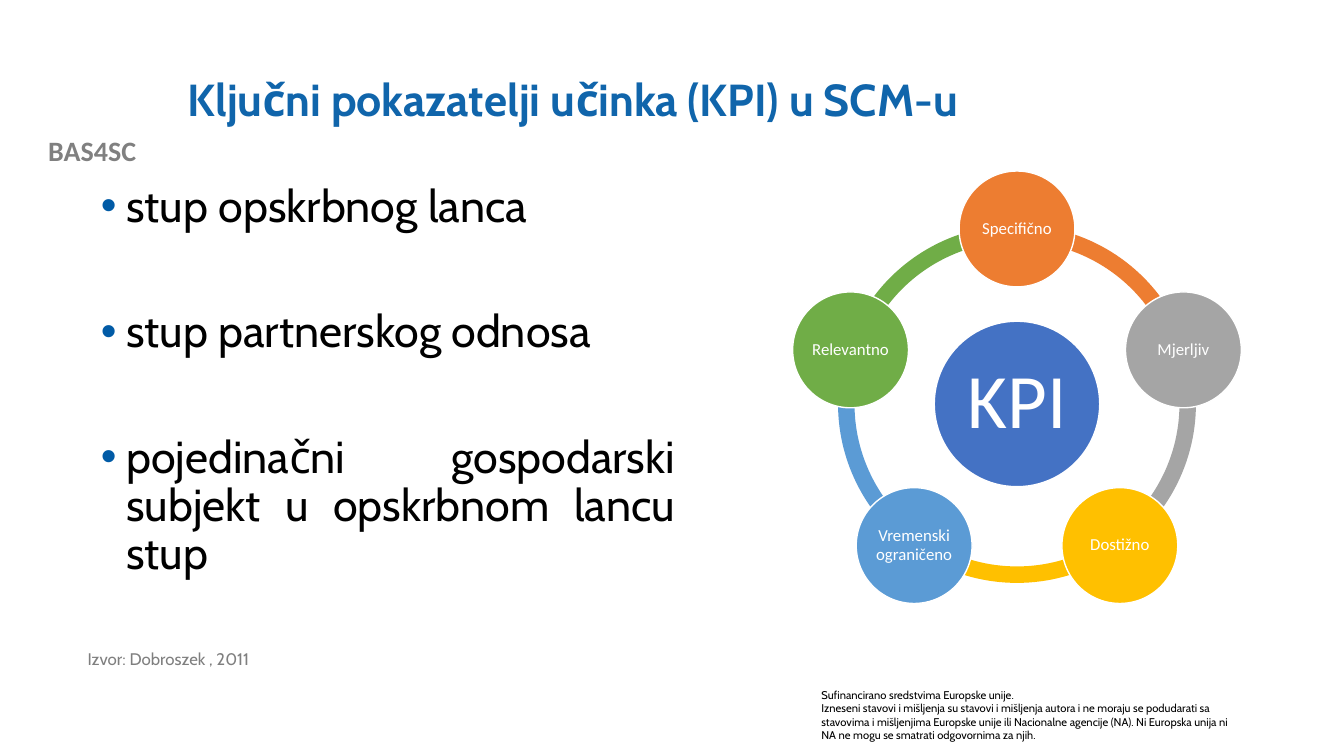
import math
from lxml import etree
from pptx import Presentation
from pptx.dml.color import RGBColor
from pptx.enum.shapes import MSO_SHAPE
from pptx.enum.text import MSO_ANCHOR, MSO_AUTO_SIZE, PP_ALIGN
from pptx.oxml.ns import qn
from pptx.util import Cm, Pt

ARC, OVAL = MSO_SHAPE.BLOCK_ARC, MSO_SHAPE.OVAL
LEFT, CENTER, JUSTIFY = PP_ALIGN.LEFT, PP_ALIGN.CENTER, PP_ALIGN.JUSTIFY
TOP, MIDDLE = MSO_ANCHOR.TOP, MSO_ANCHOR.MIDDLE

COLORS = {
    "title": "1065AB", "bullet": "015BA6", "text": "000000",
    "project": "808080", "source": "7F7F7F", "white": "FFFFFF",
    "hub": "4472C4", "orange": "ED7D31", "grey": "A5A5A5",
    "yellow": "FFC000", "blue": "5B9BD5", "green": "70AD47",
}

TITLE = "Ključni pokazatelji učinka (KPI) u SCM-u"
PILLARS = [
    "stup opskrbnog lanca",
    "stup partnerskog odnosa",
    "pojedinačni gospodarski subjekt u opskrbnom lancu stup",
]
PROJECT = "BAS4SC"
SOURCE = "Izvor: Dobroszek , 2011"
DISCLAIMER = [
    "Sufinancirano sredstvima Europske unije.",
    "Izneseni stavovi i mišljenja su stavovi i mišljenja autora i ne moraju se "
    "podudarati sa stavovima i mišljenjima Europske unije ili Nacionalne agencije "
    "(NA). Ni Europska unija ni NA ne mogu se smatrati odgovornima za njih.",
]
HUB = "KPI"
CRITERIA = [
    ("Specifično", "orange"),
    ("Mjerljiv", "grey"),
    ("Dostižno", "yellow"),
    ("Vremenski ograničeno", "blue"),
    ("Relevantno", "green"),
]

CENTER_X, CENTER_Y = 25.63, 10.18
ORBIT, RING_SIZE, NODE_SIZE, HUB_SIZE = 4.41, 9.02, 2.92, 4.17
RING_THICKNESS = 0.046
ADJ_PER_DEGREE = 0.6


def rgb(name):
    return RGBColor.from_string(COLORS[name])


def write(tf, lines, size, color, font="Cabin", bold=False, align=LEFT,
          spacing=0.9, gap=0, anchor=TOP):
    tf.word_wrap = True
    tf.auto_size = MSO_AUTO_SIZE.NONE
    tf.vertical_anchor = anchor
    for i, line in enumerate(lines):
        p = tf.paragraphs[0] if i == 0 else tf.add_paragraph()
        p.alignment = align
        p.line_spacing = spacing
        p.space_before = Pt(gap if i else 0)
        r = p.add_run()
        r.text = line
        r.font.name = font
        r.font.size = Pt(size)
        r.font.bold = bold
        r.font.color.rgb = rgb(color)


def place(sp, left, top, width, height):
    sp.left, sp.top, sp.width, sp.height = Cm(left), Cm(top), Cm(width), Cm(height)


def add_text(s, box, lines, size, color, **style):
    sp = s.shapes.add_textbox(*map(Cm, box))
    write(sp.text_frame, lines, size, color, **style)


def add_round(s, kind, x, y, size, color):
    sp = s.shapes.add_shape(kind, Cm(x - size / 2), Cm(y - size / 2), Cm(size), Cm(size))
    sp.shadow.inherit = False
    sp.fill.solid()
    sp.fill.fore_color.rgb = rgb(color)
    sp.line.fill.background()
    return sp


def add_circle(s, x, y, size, color, label, font_size, inset):
    sp = add_round(s, OVAL, x, y, size, color)
    sp.line.color.rgb = rgb("white")
    sp.line.width = Pt(1)
    tf = sp.text_frame
    tf.margin_left = tf.margin_right = tf.margin_top = tf.margin_bottom = Cm(inset)
    write(tf, [label], font_size, "white", font="Calibri", align=CENTER, anchor=MIDDLE)


def add_bullet(p):
    pPr = p._p.get_or_add_pPr()
    pPr.set("marL", str(Cm(0.64)))
    pPr.set("indent", str(-Cm(0.64)))
    color = etree.SubElement(pPr, qn("a:buClr"))
    etree.SubElement(color, qn("a:srgbClr"), val=COLORS["bullet"])
    etree.SubElement(pPr, qn("a:buFont"), typeface="Arial")
    etree.SubElement(pPr, qn("a:buChar"), char="•")


def main():
    prs = Presentation()
    prs.slide_width, prs.slide_height = Cm(33.87), Cm(19.05)
    s = prs.slides.add_slide(prs.slide_layouts[1])

    title, body = s.shapes.title, s.placeholders[1]
    place(title, 4.47, 1.02, 27.08, 3.1)
    write(title.text_frame, [TITLE], 32, "title", bold=True, anchor=MIDDLE)
    place(body, 2.29, 4.5, 14.99, 12.09)
    write(body.text_frame, PILLARS, 32, "text", align=JUSTIFY, gap=55)
    for p in body.text_frame.paragraphs:
        add_bullet(p)

    add_text(s, (0, 3.25, 4.65, 1.12), [PROJECT], 20, "project",
             font="Calibri", bold=True, align=CENTER, spacing=1.0)
    add_text(s, (1.96, 16.28, 12.73, 1.32), [SOURCE], 12, "source")
    add_text(s, (20.45, 17.22, 11.1, 1.63), DISCLAIMER, 8, "text", spacing=1.0)

    step = 360 / len(CRITERIA)
    angles = [(270 + i * step) % 360 for i in range(len(CRITERIA))]
    for (label, color), angle in zip(CRITERIA, angles):
        arc = add_round(s, ARC, CENTER_X, CENTER_Y, RING_SIZE, color)
        arc.adjustments[0] = angle * ADJ_PER_DEGREE
        arc.adjustments[1] = (angle + step) % 360 * ADJ_PER_DEGREE
        arc.adjustments[2] = RING_THICKNESS

    add_circle(s, CENTER_X, CENTER_Y, HUB_SIZE, "hub", HUB, 55, 0.2)
    for (label, color), angle in zip(CRITERIA, angles):
        x = CENTER_X + ORBIT * math.cos(math.radians(angle))
        y = CENTER_Y + ORBIT * math.sin(math.radians(angle))
        add_circle(s, x, y, NODE_SIZE, color, label, 12, 0.04)

    prs.save("out.pptx")


if __name__ == "__main__":
    main()
